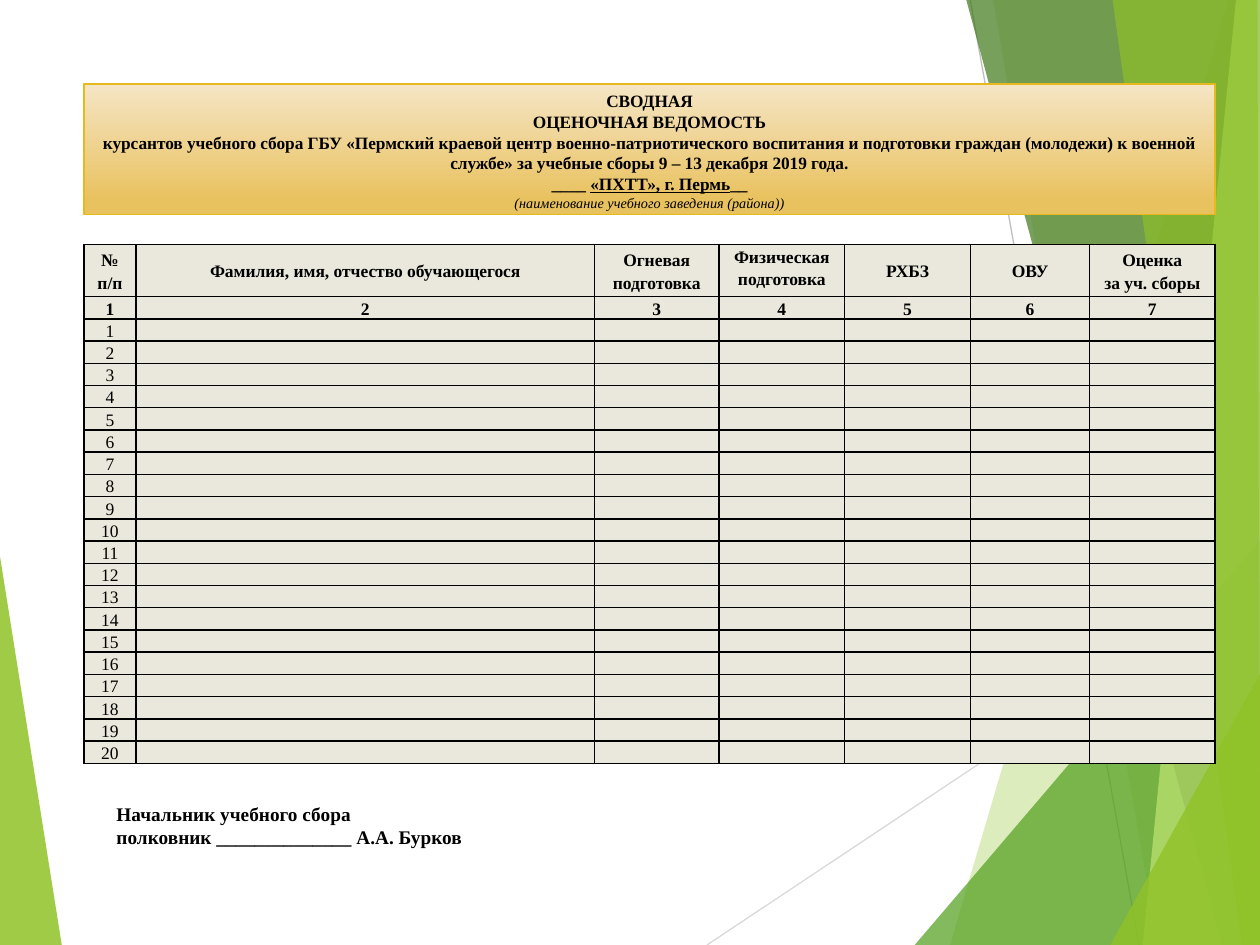
from dataclasses import dataclass, field

from lxml.etree import SubElement
from pptx import Presentation
from pptx.dml.color import RGBColor
from pptx.enum.shapes import MSO_CONNECTOR, MSO_SHAPE
from pptx.enum.text import MSO_ANCHOR, PP_ALIGN
from pptx.oxml.ns import qn
from pptx.util import Pt

FONT_NAME = "Times New Roman"
BLACK = RGBColor(0x00, 0x00, 0x00)
LIME = RGBColor(0x90, 0xC2, 0x26)
GREEN = RGBColor(0x54, 0xA0, 0x21)
DARK_GREEN = RGBColor(0x3F, 0x78, 0x19)
PALE_LIME = RGBColor(0xC0, 0xE4, 0x74)
LIGHT_GRAY = RGBColor(0xD9, 0xD9, 0xD9)
GRAY = RGBColor(0xBF, 0xBF, 0xBF)
CREAM = RGBColor(0xF5, 0xE5, 0xC5)
GOLD = RGBColor(0xE9, 0xC2, 0x60)
GOLD_LINE = RGBColor(0xE6, 0xB9, 0x1E)
CELL_FILL = RGBColor(0xEA, 0xE8, 0xDC)

WIDTH, HEIGHT = 720, 540
LEFT, CONTENT_WIDTH = 48, 646.4
STUDENT_COUNT = 20
HEADER_HEIGHT, ROW_HEIGHT = 29.7, 12.7
COLUMN_WIDTHS = [29.7, 262, 71.2, 71.8, 72, 68, 71.7]
HEADERS = [
    "№\nп/п", "Фамилия, имя, отчество обучающегося", "Огневая\nподготовка",
    "Физическая\nподготовка", "РХБЗ", "ОВУ", "Оценка\nза уч. сборы",
]
TOP_ANCHORED_COLUMN = 3


@dataclass
class Facet:
    points: list[tuple[float, float]]
    color: RGBColor
    opacity: int


@dataclass
class Ray:
    start: tuple[float, float]
    end: tuple[float, float]
    color: RGBColor


@dataclass
class TitlePart:
    text: str
    new_line: bool = True
    font: dict = field(default_factory=dict)


DECORATION = [
    Facet([(0, 318), (35.3, HEIGHT), (0, HEIGHT)], LIME, 85),
    Ray((404, HEIGHT), (WIDTH, 329.5), LIGHT_GRAY),
    Ray((554.4, 0), (650.9, HEIGHT), GRAY),
    Facet([(702, 0), (542.9, HEIGHT), (WIDTH, HEIGHT), (WIDTH, 0)], LIME, 30),
    Facet([(567.4, 0), (661.7, HEIGHT), (WIDTH, HEIGHT), (WIDTH, 0)], LIME, 20),
    Facet([(522.7, HEIGHT), (WIDTH, 308.9), (WIDTH, HEIGHT)], GREEN, 72),
    Facet([(552.2, 0), (698.4, HEIGHT), (WIDTH, HEIGHT), (WIDTH, 0)], DARK_GREEN, 70),
    Facet([(706.3, 0), (653, HEIGHT), (WIDTH, HEIGHT), (WIDTH, 0)], PALE_LIME, 70),
    Facet([(635.8, 0), (709.9, HEIGHT), (WIDTH, HEIGHT), (718.6, 0)], LIME, 65),
    Facet([(634.5, HEIGHT), (WIDTH, 385.2), (WIDTH, HEIGHT)], LIME, 80),
]

TITLE_PARTS = [
    TitlePart("СВОДНАЯ", new_line=False),
    TitlePart("ОЦЕНОЧНАЯ ВЕДОМОСТЬ"),
    TitlePart(
        "курсантов учебного сбора ГБУ «Пермский краевой центр военно-патриотического "
        "воспитания и подготовки граждан (молодежи) к военной службе» "
        "за учебные сборы 9 – 13 декабря 2019 года."
    ),
    TitlePart("____ "),
    TitlePart("«ПХТТ», г. Пермь", new_line=False, font={"underline": True}),
    TitlePart("__", new_line=False),
    TitlePart("(наименование учебного заведения (района))",
              font={"size": Pt(8.1), "bold": False, "italic": True}),
]


def format_font(font, **changes) -> None:
    values = {"name": FONT_NAME, "size": Pt(10), "bold": True} | changes
    for name, value in values.items():
        setattr(font, name, value)
    font.color.rgb = BLACK


def add_facet(slide, facet: Facet) -> None:
    points = [(Pt(x), Pt(y)) for x, y in facet.points]
    builder = slide.shapes.build_freeform(*points[0])
    builder.add_line_segments(points[1:], close=True)
    shape = builder.convert_to_shape()
    shape.shadow.inherit = False
    shape.fill.solid()
    shape.fill.fore_color.rgb = facet.color
    shape.line.fill.background()
    color = shape._element.spPr.find(f"{qn('a:solidFill')}/{qn('a:srgbClr')}")
    SubElement(color, qn("a:alpha"), val=str(facet.opacity * 1000))


def add_ray(slide, ray: Ray) -> None:
    ends = [Pt(value) for value in (*ray.start, *ray.end)]
    connector = slide.shapes.add_connector(MSO_CONNECTOR.STRAIGHT, *ends)
    connector.line.color.rgb = ray.color
    connector.line.width = Pt(0.75)
    SubElement(connector._element.spPr, qn("a:effectLst"))


def add_title(slide) -> None:
    shape = slide.shapes.add_shape(
        MSO_SHAPE.RECTANGLE, Pt(LEFT), Pt(48), Pt(CONTENT_WIDTH), Pt(74.6))
    shape.shadow.inherit = False
    shape.fill.gradient()
    shape.fill.gradient_angle = 270
    for stop, color, position in zip(shape.fill.gradient_stops, (CREAM, GOLD), (0, 0.88)):
        stop.color.rgb = color
        stop.position = position
    shape.line.color.rgb = GOLD_LINE
    shape.line.width = Pt(1)
    shape.text_frame.word_wrap = True
    shape.text_frame.vertical_anchor = MSO_ANCHOR.TOP
    paragraph = shape.text_frame.paragraphs[0]
    paragraph.alignment = PP_ALIGN.CENTER
    for part in TITLE_PARTS:
        if part.new_line:
            paragraph.add_line_break()
        run = paragraph.add_run()
        run.text = part.text
        format_font(run.font, **({"size": Pt(9.9)} | part.font))


def add_borders(cell) -> None:
    """Draw black 1 pt lines on all four sides; they must precede the fill."""
    properties = cell._tc.get_or_add_tcPr()
    for side in ("a:lnL", "a:lnR", "a:lnT", "a:lnB"):
        line = SubElement(properties, qn(side), w=str(int(Pt(1))))
        SubElement(SubElement(line, qn("a:solidFill")), qn("a:srgbClr"), val=str(BLACK))


def fill_cell(cell, text: str, bold: bool, anchor: MSO_ANCHOR) -> None:
    add_borders(cell)
    cell.fill.solid()
    cell.fill.fore_color.rgb = CELL_FILL
    margins = {"margin_left": 3.6, "margin_right": 3.6, "margin_top": 0, "margin_bottom": 0}
    for name, value in margins.items():
        setattr(cell, name, Pt(value))
    cell.vertical_anchor = anchor
    cell.text = text
    for paragraph in cell.text_frame.paragraphs:
        paragraph.alignment = PP_ALIGN.CENTER
        paragraph.line_spacing = 1.15
        for run in paragraph.runs:
            format_font(run.font, bold=bold)
        if not text:
            # Keeps empty rows from growing to the default text size
            SubElement(paragraph._p, qn("a:endParaRPr"), sz="800")


def add_grade_table(slide) -> None:
    column_count = len(HEADERS)
    rows = [HEADERS, [str(number) for number in range(1, column_count + 1)]]
    rows += [[str(number)] + [""] * (column_count - 1)
             for number in range(1, STUDENT_COUNT + 1)]
    heights = [HEADER_HEIGHT] + [ROW_HEIGHT] * (len(rows) - 1)
    table = slide.shapes.add_table(
        len(rows), column_count, Pt(LEFT), Pt(139.8), Pt(CONTENT_WIDTH), Pt(sum(heights))).table
    for column, width in zip(table.columns, COLUMN_WIDTHS):
        column.width = Pt(width)
    for row_index, (texts, height) in enumerate(zip(rows, heights)):
        table.rows[row_index].height = Pt(height)
        for column_index, text in enumerate(texts):
            top = row_index < 2 and column_index == TOP_ANCHORED_COLUMN
            anchor = MSO_ANCHOR.TOP if top else MSO_ANCHOR.MIDDLE
            fill_cell(table.cell(row_index, column_index), text, row_index < 2, anchor)


def add_signature(slide) -> None:
    text_box = slide.shapes.add_textbox(Pt(59.5), Pt(455), Pt(360), Pt(34))
    text_box.text_frame.word_wrap = True
    text_box.text_frame.text = "Начальник учебного сбора\nполковник ______________ А.А. Бурков"
    for paragraph in text_box.text_frame.paragraphs:
        format_font(paragraph.runs[0].font, size=Pt(11))


def main() -> None:
    presentation = Presentation()
    presentation.slide_width, presentation.slide_height = Pt(WIDTH), Pt(HEIGHT)
    slide = presentation.slides.add_slide(presentation.slide_layouts[6])
    for item in DECORATION:
        if isinstance(item, Facet):
            add_facet(slide, item)
        else:
            add_ray(slide, item)
    add_title(slide)
    add_grade_table(slide)
    add_signature(slide)
    presentation.save("out.pptx")


if __name__ == "__main__":
    main()
